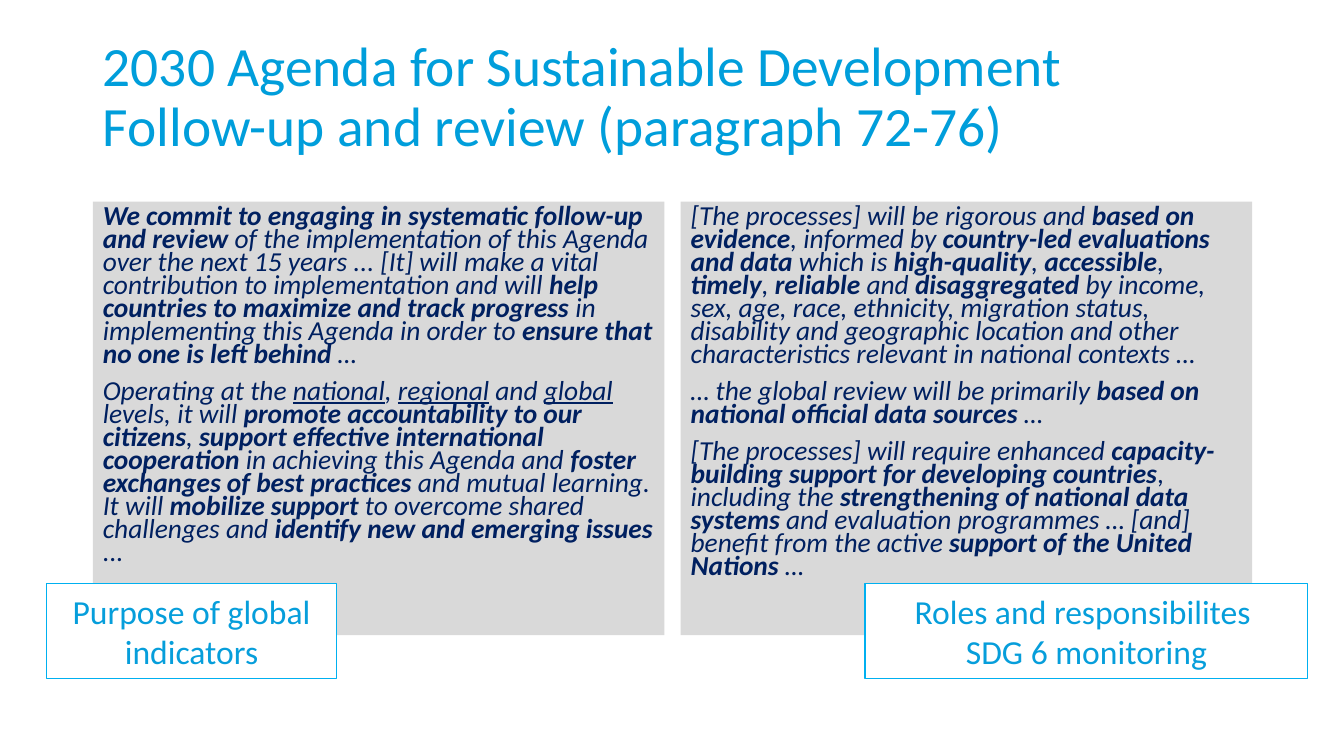
from lxml import etree
from pptx import Presentation
from pptx.dml.color import RGBColor
from pptx.enum.shapes import MSO_SHAPE
from pptx.enum.text import MSO_ANCHOR, MSO_AUTO_SIZE, PP_ALIGN
from pptx.oxml.ns import qn
from pptx.util import Inches, Pt

RECTANGLE = MSO_SHAPE.RECTANGLE
TOP, MIDDLE = MSO_ANCHOR.TOP, MSO_ANCHOR.MIDDLE
LEFT, CENTER = PP_ALIGN.LEFT, PP_ALIGN.CENTER
NO_AUTOFIT = MSO_AUTO_SIZE.NONE

TITLE_FORMAT = {"name": "Calibri", "size": Pt(39.6), "bold": False}
QUOTE_FORMAT = {"name": "Calibri", "size": Pt(19.6), "italic": True}
LABEL_FORMAT = {"name": "Calibri", "size": Pt(24)}

TITLE = "2030 Agenda for Sustainable Development\vFollow-up and review (paragraph 72-76)"

# In the quotes, *...* is bold and _..._ is underlined.
PURPOSE_QUOTES = [
    "*We commit to engaging in systematic follow-up and review* of the implementation "
    "of this Agenda over the next 15 years ... [It] will make a vital contribution to "
    "implementation and will *help countries to maximize and track progress* in "
    "implementing this Agenda in order to *ensure that no one is left behind* …",
    "Operating at the _national_, _regional_ and _global_ levels, it will *promote "
    "accountability to our citizens*, *support effective international cooperation* in "
    "achieving this Agenda and *foster exchanges of best practices* and mutual learning. "
    "It will *mobilize support* to overcome shared challenges and *identify new and "
    "emerging issues* ...",
]
ROLE_QUOTES = [
    "[The processes] will be rigorous and *based on evidence*, informed by *country-led "
    "evaluations and data* which is *high-quality*, *accessible*, *timely*, *reliable* "
    "and *disaggregated* by income, sex, age, race, ethnicity, migration status, "
    "disability and geographic location and other characteristics relevant in national "
    "contexts …",
    "… the global review will be primarily *based on national official data sources* …",
    "[The processes] will require enhanced *capacity-building support for developing "
    "countries*, including the *strengthening of national data systems* and evaluation "
    "programmes … [and] benefit from the active *support of the United Nations *…",
]


def color(value):
    return RGBColor.from_string(value)


def place(shape, box):
    shape.left, shape.top, shape.width, shape.height = map(Inches, box)


def prepare_frame(shape, anchor):
    frame = shape.text_frame
    frame.auto_size = NO_AUTOFIT
    frame.word_wrap = True
    frame.vertical_anchor = anchor
    return frame


def format_span(span, values, text_color):
    for name, value in values.items():
        setattr(span.font, name, value)
    span.font.color.rgb = color(text_color)


def remove_bullet(para):
    properties = para._p.get_or_add_pPr()
    properties.set("marL", "0")
    properties.set("indent", "0")
    etree.SubElement(properties, qn("a:buNone"))


def add_marked_text(para, text):
    for bold_index, bold_part in enumerate(text.split("*")):
        for line_index, part in enumerate(bold_part.split("_")):
            if part:
                span = para.add_run()
                span.text = part
                format_span(span, QUOTE_FORMAT, "002060")
                span.font.bold = bold_index % 2 == 1
                span.font.underline = line_index % 2 == 1


def add_title(title, box):
    place(title, box)
    para = prepare_frame(title, MIDDLE).paragraphs[0]
    para.text = TITLE
    para.alignment = LEFT
    para.line_spacing = 0.9
    for span in para.runs:
        format_span(span, TITLE_FORMAT, "009EDB")


def add_quotes(panel, box, quotes):
    place(panel, box)
    panel.fill.solid()
    panel.fill.fore_color.rgb = color("D9D9D9")
    frame = prepare_frame(panel, TOP)
    for index, quote in enumerate(quotes):
        para = frame.add_paragraph() if index else frame.paragraphs[0]
        remove_bullet(para)
        para.line_spacing = 0.7
        para.space_before = Pt(10 if index else 0)
        add_marked_text(para, quote)


def add_label(page, box, lines):
    label = page.shapes.add_shape(RECTANGLE, *map(Inches, box))
    label.shadow.inherit = False
    label.fill.solid()
    label.fill.fore_color.rgb = color("FFFFFF")
    label.line.color.rgb = color("00B0F0")
    label.line.width = Pt(1)
    frame = prepare_frame(label, MIDDLE)
    for index, line in enumerate(lines):
        para = frame.add_paragraph() if index else frame.paragraphs[0]
        para.alignment = CENTER
        span = para.add_run()
        span.text = line
        format_span(span, LABEL_FORMAT, "069EDB")


def build_follow_up_page(deck):
    page = deck.slides.add_slide(deck.slide_layouts[3])
    title, purpose, roles = page.placeholders
    add_title(title, (0.92, 0.4, 11.5, 1.16))
    add_quotes(purpose, (0.92, 2, 5.67, 4.3), PURPOSE_QUOTES)
    add_quotes(roles, (6.75, 2, 5.67, 4.3), ROLE_QUOTES)
    add_label(page, (0.46, 5.79, 2.88, 0.94), ["Purpose of global indicators"])
    add_label(page, (8.58, 5.79, 4.39, 0.94), ["Roles and responsibilites ", "SDG 6 monitoring"])


def main():
    deck = Presentation()
    deck.slide_width, deck.slide_height = Inches(13.33), Inches(7.5)
    build_follow_up_page(deck)
    deck.save("out.pptx")


if __name__ == "__main__":
    main()
